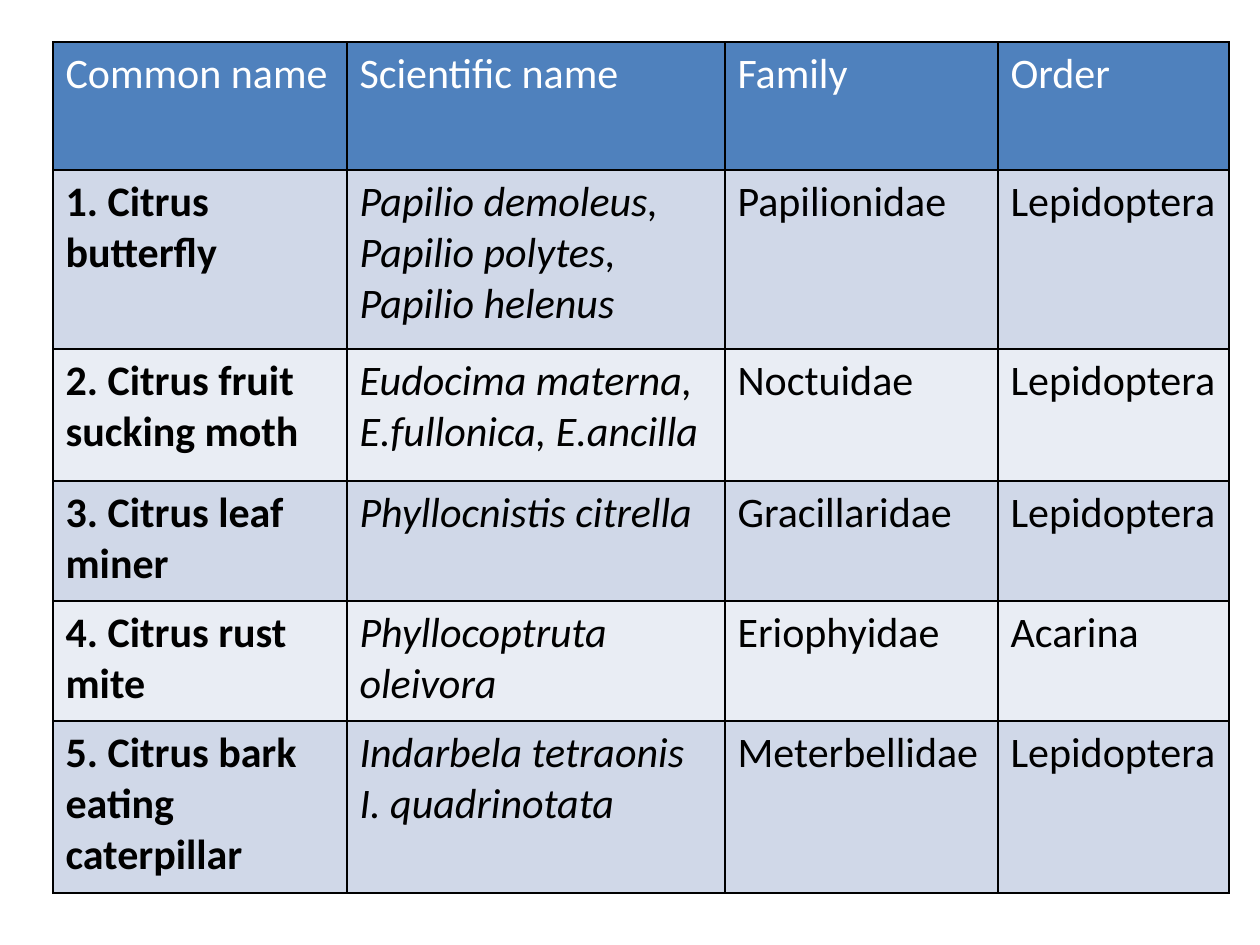
from lxml.etree import SubElement
from pptx import Presentation
from pptx.dml.color import RGBColor
from pptx.oxml.ns import qn
from pptx.util import Pt

PX = 914400 / 126
COLUMNS = [294, 378, 273, 231]
ROWS = [128, 179, 132, 120, 120, 172]
HEADER_FILL, BANDS = "4F81BD", ["E9EDF4", "D0D8E8"]
PESTS = [
    ["Common name", "Scientific name", "Family", "Order"],
    ["1. Citrus butterfly", "Papilio demoleus, Papilio polytes, Papilio helenus",
     "Papilionidae", "Lepidoptera"],
    ["2. Citrus fruit sucking moth", "Eudocima materna, E.fullonica, E.ancilla",
     "Noctuidae", "Lepidoptera"],
    ["3. Citrus leaf miner", "Phyllocnistis citrella", "Gracillaridae", "Lepidoptera"],
    ["4. Citrus rust mite", "Phyllocoptruta oleivora", "Eriophyidae", "Acarina"],
    ["5. Citrus bark eating caterpillar", "Indarbela tetraonis\nI. quadrinotata",
     "Meterbellidae", "Lepidoptera"],
]


def px(n):
    """Turn pixels into EMU."""
    return round(n * PX)


def rgb(color):
    """Turn a hex string into a colour."""
    return RGBColor.from_string(color)


def add_borders(cell, color):
    """Draw a one-point line on each side of a cell."""
    tcPr = cell._tc.get_or_add_tcPr()
    for i, side in enumerate(["a:lnL", "a:lnR", "a:lnT", "a:lnB"]):
        ln = tcPr.makeelement(qn(side), {"w": str(Pt(1))})
        fill = SubElement(ln, qn("a:solidFill"))
        SubElement(fill, qn("a:srgbClr"), val=color)
        tcPr.insert(i, ln)


def fill_cell(cell, text, fill, color, bold, italic):
    """Write and format one cell."""
    cell.fill.solid()
    cell.fill.fore_color.rgb = rgb(fill)
    add_borders(cell, "000000")
    cell.text_frame.text = text
    for p in cell.text_frame.paragraphs:
        for r in p.runs:
            r.font.name, r.font.size = "Calibri", Pt(24)
            r.font.bold, r.font.italic = bold, italic
            r.font.color.rgb = rgb(color)


def add_pest_table(s, left, top):
    """Place the table of citrus pests at a corner point."""
    table = s.shapes.add_table(len(ROWS), len(COLUMNS), px(left), px(top),
                               px(sum(COLUMNS)), px(sum(ROWS))).table
    for column, width in zip(table.columns, COLUMNS):
        column.width = px(width)
    for i, (row, height) in enumerate(zip(table.rows, ROWS)):
        row.height = px(height)
        fill = BANDS[i % 2] if i else HEADER_FILL
        color = "000000" if i else "FFFFFF"
        for j, text in enumerate(PESTS[i]):
            fill_cell(table.cell(i, j), text, fill, color,
                      bold=i > 0 and j == 0, italic=i > 0 and j == 1)


def main():
    """Build and save the slide."""
    prs = Presentation()
    prs.slide_width, prs.slide_height = px(1260), px(945)
    s = prs.slides.add_slide(prs.slide_layouts[6])
    add_pest_table(s, 53, 42)
    prs.save("out.pptx")


if __name__ == "__main__":
    main()
